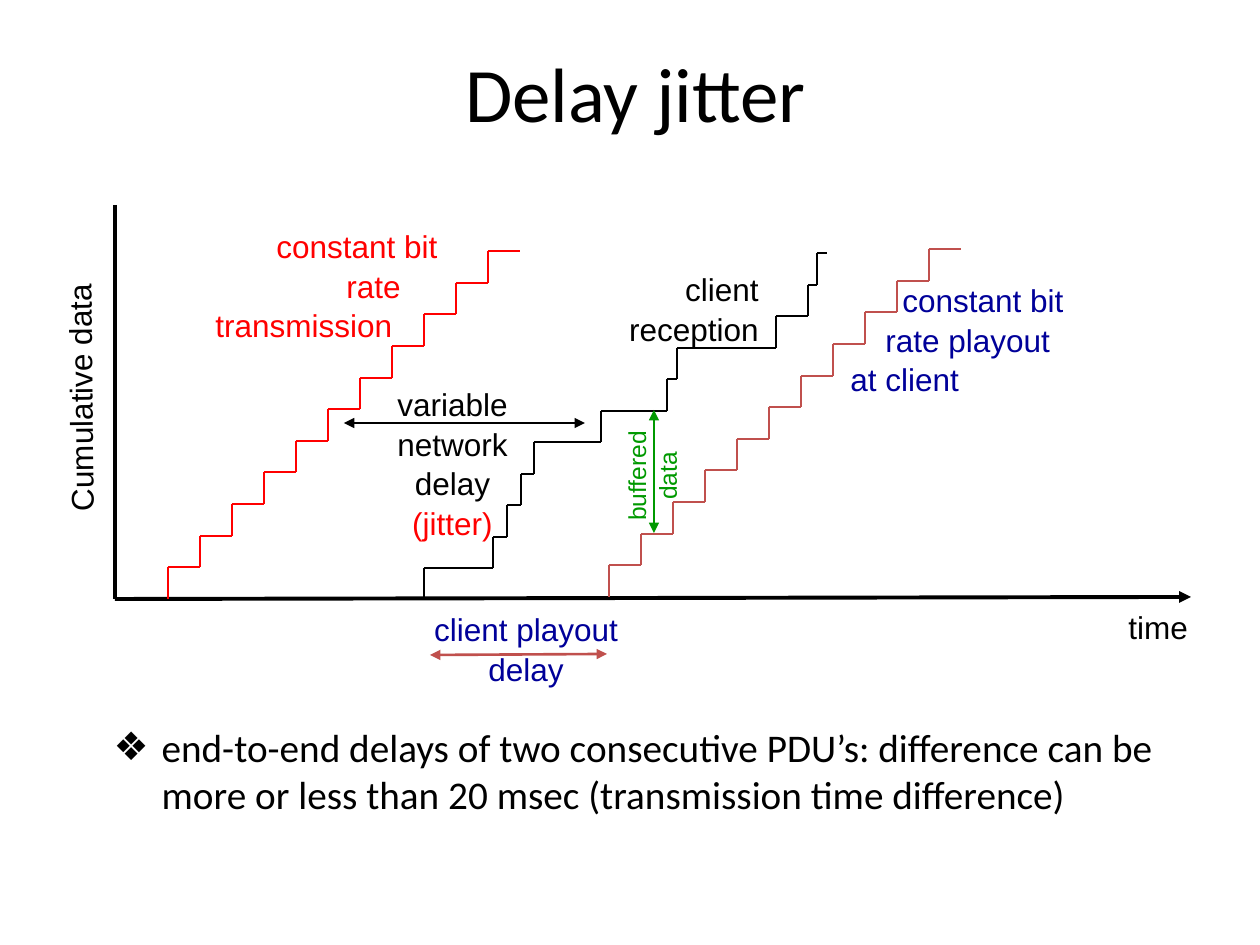
from lxml import etree
from pptx import Presentation
from pptx.dml.color import RGBColor
from pptx.enum.shapes import MSO_CONNECTOR
from pptx.enum.text import MSO_ANCHOR, MSO_AUTO_SIZE, PP_ALIGN
from pptx.oxml.ns import qn
from pptx.util import Emu, Pt

SCALE = 914400 / 126
LINE = MSO_CONNECTOR.STRAIGHT
MIDDLE = MSO_ANCHOR.MIDDLE
GROW, FIXED = MSO_AUTO_SIZE.SHAPE_TO_FIT_TEXT, MSO_AUTO_SIZE.NONE
LEFT, CENTER, RIGHT = PP_ALIGN.LEFT, PP_ALIGN.CENTER, PP_ALIGN.RIGHT
INK = {"black": "000000", "red": "FF0000", "brick": "C0504D",
       "navy": "000099", "green": "009900"}
EVEN = [32] * 11
UNEVEN = [69, 14, 14, 13, 67, 66, 10, 99, 32, 9, 10]


def px(num):
    """Turn px into EMU."""
    return Emu(round(num * SCALE))


def style(para, size, ink, face):
    """Format all runs of a paragraph."""
    for run in para.runs:
        run.font.size = Pt(size)
        run.font.name = face
        run.font.color.rgb = RGBColor.from_string(INK[ink])


def line(slide, start, end, ink, width=1.5, heads=()):
    """Draw a straight line with arrowheads at the named ends."""
    wire = slide.shapes.add_connector(LINE, *map(px, (*start, *end)))
    wire.line.color.rgb = RGBColor.from_string(INK[ink])
    wire.line.width = Pt(width)
    props = wire.line._get_or_add_ln()
    for head in heads:
        etree.SubElement(props, qn(f"a:{head}"), type="triangle")
    etree.SubElement(wire._element.spPr, qn("a:effectLst"))


def label(slide, box, rows, ink, align=LEFT, size=18, turn=0, wrap=True,
          dents=()):
    """Write one paragraph per row, each with its own left indent."""
    shape = slide.shapes.add_textbox(*map(px, box))
    shape.rotation = turn
    frame = shape.text_frame
    frame.word_wrap = wrap
    frame.auto_size = GROW
    frame.text = "\n".join(rows)
    for para in frame.paragraphs:
        para.alignment = align
        para.line_spacing = 1.05
        style(para, size, ink, "Arial")
    for para, dent in zip(frame.paragraphs, dents):
        para._p.get_or_add_pPr().set("marL", str(px(dent)))
    return frame


def stairs(slide, box, runs, ink):
    """Climb from the lower left of the box, one equal rise per run."""
    x, top, _, high = box
    base = top + high
    y = base
    for step, run in enumerate(runs, 1):
        rise = base - round(high * step / len(runs))
        line(slide, (x, y), (x, rise), ink)
        line(slide, (x, rise), (x + run, rise), ink)
        x, y = x + run, rise


def plot(slide, box):
    """Draw axes, the three staircases and their labels."""
    left, top, wide, high = box

    def at(x, y, *size):
        """Shift a place by the corner of the plot."""
        return (left + x, top + y, *size)

    both = ("headEnd", "tailEnd")
    line(slide, at(0, 0), at(0, high), "black", 2.25)
    line(slide, at(0, high), at(wide, high - 2), "black", 2.25, ("tailEnd",))
    label(slide, at(-172, 159, 270, 50), ["Cumulative data"], "black",
          turn=269.4)
    label(slide, at(1001, 395, 86, 50), ["time"], "black", wrap=False)

    stairs(slide, at(53, 46, 352, 348), EVEN, "red")
    label(slide, at(88, 14, 257, 127), ["constant bit", "rate", "transmission"],
          "red", dents=(61, 131, 0))

    stairs(slide, at(309, 48, 403, 347), UNEVEN, "black")
    jitter = label(slide, at(268, 172, 139, 165),
                   ["variable", "network", "delay", "(jitter)"],
                   "black", CENTER, wrap=False)
    style(jitter.paragraphs[-1], 18, "red", "Arial")
    line(slide, at(229, 218), at(470, 218), "black", heads=both)
    label(slide, at(500, 57, 156, 89), ["client", "reception"], "black", RIGHT,
          wrap=False)

    stairs(slide, at(494, 44, 352, 348), EVEN, "brick")
    label(slide, at(714, 68, 257, 127),
          ["constant bit", "rate playout", "at client"], "navy",
          dents=(61, 44, 9))
    label(slide, at(295, 397, 232, 88), ["client playout", "delay"], "navy",
          CENTER)
    line(slide, at(315, 450), at(492, 449), "brick", heads=both)

    line(slide, at(539, 328), at(539, 205), "green", heads=both)
    label(slide, at(477, 235, 116, 72), ["buffered", "data"], "green", CENTER,
          size=14, turn=270, wrap=False)


def fill(shape, box, text, size):
    """Move a placeholder to the box and set its text."""
    shape.left, shape.top, shape.width, shape.height = map(px, box)
    frame = shape.text_frame
    frame.auto_size = FIXED
    frame.text = text
    para = frame.paragraphs[0]
    style(para, size, "black", "Calibri")
    return para


def title(slide, box):
    """Set the heading."""
    fill(slide.shapes.title, box, "Delay jitter", 44).alignment = CENTER
    slide.shapes.title.text_frame.vertical_anchor = MIDDLE


def notes(slide, box):
    """Set the bullet list below the plot."""
    para = fill(slide.placeholders[1], box,
                "end-to-end delays of two consecutive PDU’s: difference can be "
                "more or less than 20 msec (transmission time difference)", 22.4)
    props = para._p.get_or_add_pPr()
    props.set("marL", str(px(48)))
    props.set("indent", str(px(-48)))
    etree.SubElement(props, qn("a:buChar"), char="❖")


def main():
    """Build and save the slide."""
    deck = Presentation()
    deck.slide_width, deck.slide_height = px(1260), px(945)
    slide = deck.slides.add_slide(deck.slide_layouts[1])
    plot(slide, (115, 205, 1076, 394))
    title(slide, (73, 32, 1125, 120))
    notes(slide, (101, 717, 1071, 122))
    deck.save("out.pptx")


if __name__ == "__main__":
    main()
